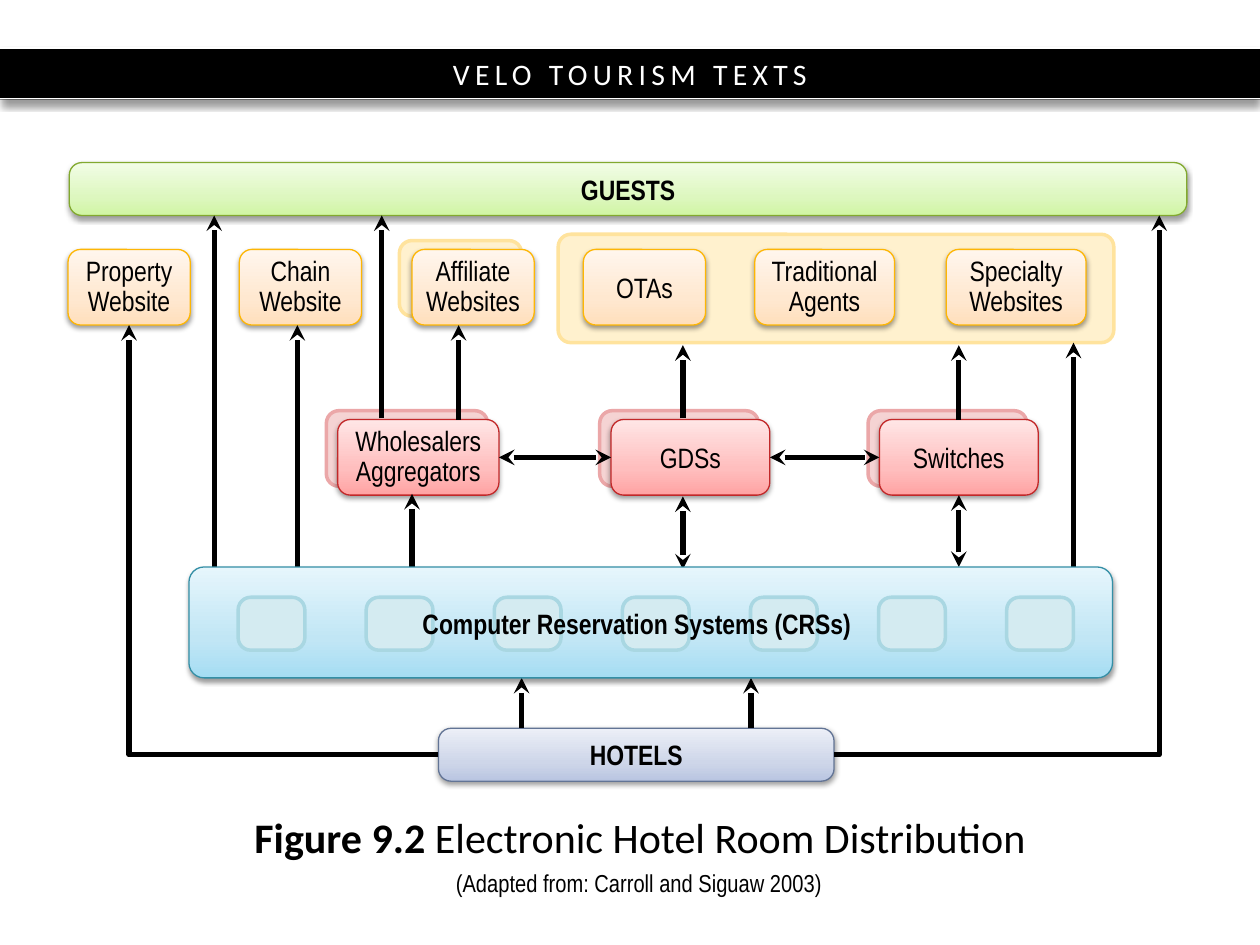
from lxml.etree import SubElement
from pptx import Presentation
from pptx.dml.color import RGBColor
from pptx.enum.shapes import MSO_CONNECTOR, MSO_SHAPE
from pptx.enum.text import MSO_ANCHOR, PP_ALIGN
from pptx.oxml import parse_xml
from pptx.oxml.ns import nsdecls, qn
from pptx.util import Inches, Pt

NARROW = "Arial Narrow"
TOP, LEFT, BOTTOM, RIGHT = range(4)

# Gradient colours from bottom to top, then the outline
GREEN = ("D0F5A3", "DDF7BF", "F2FDE6", "82A92F")
ORANGE = ("FFDFBC", "FFE8D0", "FFF6ED", "FEB604")
RED = ("FFA3A3", "FFBEBE", "FFE6E6", "C22829")
BLUE = ("A5DDF3", "C1E6F5", "E6F6FC", "348FA6")
SLATE = ("B9C5E1", "CED6E9", "ECEFF7", "627495")
# Flat fill, then the outline
PALE_YELLOW = ("FFF1CE", "FFE39D")
PALE_RED = ("F5D3D3", "EBA7A8")
PALE_BLUE = ("D4EBF1", "A9D7E2")

ROW_HEIGHT = 0.6
WEBSITE_TOP = 1.98
INTERMEDIARY_TOP = 3.33


def color(value):
    return RGBColor.from_string(value)


def add_shadow(shape, opacity, blur, distance):
    """Give the shape a black shadow straight below it."""
    shape.shadow.inherit = False
    effects = shape._element.spPr.find(qn("a:effectLst"))
    shadow = SubElement(effects, qn("a:outerShdw"), blurRad=str(Pt(blur)),
                        dist=str(Pt(distance)), dir="5400000", rotWithShape="0")
    black = SubElement(shadow, qn("a:srgbClr"), val="000000")
    SubElement(black, qn("a:alpha"), val=str(opacity * 1000))


def add_run(paragraph, text, size, font=NARROW, bold=False, text_color="000000"):
    run = paragraph.add_run()
    run.text = text
    run.font.size = Pt(size)
    run.font.name = font
    run.font.bold = bold
    run.font.color.rgb = color(text_color)
    return run


def write_label(shape, text, bold=False, inset=0.0):
    frame = shape.text_frame
    frame.word_wrap = True
    frame.vertical_anchor = MSO_ANCHOR.MIDDLE
    frame.margin_left = frame.margin_right = Inches(inset)
    frame.margin_top = frame.margin_bottom = Inches(inset / 2)
    paragraph = frame.paragraphs[0]
    paragraph.alignment = PP_ALIGN.CENTER
    if not bold:
        paragraph.line_spacing = 0.9 if " " in text or "\n" in text else 1.0
    for number, line in enumerate(text.split("\n")):
        if number:
            paragraph.add_line_break()
        add_run(paragraph, line, 16, bold=bold)


def add_rounded(slide, left, top, width, height, outline, line_width, radius=0.1):
    shape = slide.shapes.add_shape(MSO_SHAPE.ROUNDED_RECTANGLE, Inches(left),
                                   Inches(top), Inches(width), Inches(height))
    shape.adjustments[0] = radius / min(width, height)
    shape.shadow.inherit = False
    shape.line.color.rgb = color(outline)
    shape.line.width = Pt(line_width)
    return shape


def add_flat_box(slide, left, top, width, height, colors):
    fill, outline = colors
    shape = add_rounded(slide, left, top, width, height, outline, 2)
    shape.fill.solid()
    shape.fill.fore_color.rgb = color(fill)


def add_gradient_box(slide, left, top, width, height, colors, radius=0.1):
    shape = add_rounded(slide, left, top, width, height, colors[3], 0.75, radius)
    stops = "".join(f'<a:gs pos="{position}"><a:srgbClr val="{value}"/></a:gs>'
                    for position, value in zip((0, 35000, 100000), colors))
    gradient = parse_xml(f'<a:gradFill {nsdecls("a")} rotWithShape="1"><a:gsLst>{stops}'
                         '</a:gsLst><a:lin ang="16200000" scaled="0"/></a:gradFill>')
    shape._element.spPr.find(qn("a:prstGeom")).addnext(gradient)
    add_shadow(shape, 38, 3.1, 1.6)
    return shape


def add_line(slide, start, end, line_color="000000", width=3.0, kind=MSO_CONNECTOR.STRAIGHT):
    connector = slide.shapes.add_connector(kind, *map(Inches, start + end))
    connector.line.color.rgb = color(line_color)
    connector.line.width = Pt(width)
    SubElement(connector._element.spPr, qn("a:effectLst"))
    return connector


def add_arrow(slide, start, end, both=False, kind=MSO_CONNECTOR.STRAIGHT):
    connector = add_line(slide, start, end, kind=kind)
    line = connector.line._get_or_add_ln()
    for tag in ("a:headEnd", "a:tailEnd") if both else ("a:tailEnd",):
        SubElement(line, qn(tag), type="stealth")
    return connector


def add_corner_arrow(slide, start, end):
    """Arrow that runs sideways and then turns up once."""
    connector = add_arrow(slide, start, end, kind=MSO_CONNECTOR.ELBOW)
    connector._element.spPr.find(qn("a:prstGeom")).set("prst", "bentConnector2")
    return connector


def add_header(slide):
    top, bottom = 0.38, 0.78
    band = slide.shapes.add_shape(MSO_SHAPE.RECTANGLE, 0, Inches(top), Inches(10),
                                  Inches(0.41))
    band.fill.solid()
    band.fill.fore_color.rgb = color("000000")
    band.line.fill.background()
    add_shadow(band, 40, 4, 3)
    band.text_frame.vertical_anchor = MSO_ANCHOR.MIDDLE
    paragraph = band.text_frame.paragraphs[0]
    paragraph.alignment = PP_ALIGN.CENTER
    run = add_run(paragraph, "VELO TOURISM TEXTS", 17, "Calibri", text_color="FFFFFF")
    run._r.get_or_add_rPr().set("spc", "300")
    for y in (top, bottom):
        add_line(slide, (0, y), (10, y), "FFFFFF", 0.75)


def add_websites(slide):
    """Draw the row of sales sites and return them by label."""
    add_flat_box(slide, 4.43, 1.86, 4.41, 0.86, PALE_YELLOW)
    add_flat_box(slide, 3.17, 1.91, 0.97, ROW_HEIGHT, PALE_YELLOW)
    sites = (("Property\nWebsite", 0.54, 0.97), ("Chain\nWebsite", 1.9, 0.97),
             ("Affiliate\nWebsites", 3.27, 0.97), ("OTAs", 4.63, 0.97),
             ("Traditional Agents", 5.99, 1.11), ("Specialty Websites", 7.51, 1.11))
    boxes = {}
    for label, left, width in sites:
        boxes[label] = add_gradient_box(slide, left, WEBSITE_TOP, width, ROW_HEIGHT, ORANGE)
        write_label(boxes[label], label)
    return boxes


def add_intermediaries(slide):
    boxes = []
    for label, left, width in (("Wholesalers\nAggregators", 2.68, 1.28),
                               ("GDSs", 4.85, 1.26), ("Switches", 6.98, 1.26)):
        add_flat_box(slide, left - 0.09, INTERMEDIARY_TOP - 0.07, width, ROW_HEIGHT, PALE_RED)
        box = add_gradient_box(slide, left, INTERMEDIARY_TOP, width, ROW_HEIGHT, RED)
        write_label(box, label)
        boxes.append(box)
    return boxes


def add_reservation_systems(slide):
    add_gradient_box(slide, 1.5, 4.5, 7.33, 0.88, BLUE, 0.12)
    for column in range(7):
        add_flat_box(slide, 1.89 + column * 6.1 / 6, 4.74, 0.53, 0.42, PALE_BLUE)
    label = slide.shapes.add_textbox(Inches(2.84), Inches(4.74), Inches(4.43), Inches(0.42))
    write_label(label, "Computer Reservation Systems (CRSs)", bold=True, inset=0.1)


def add_flows(slide, hotels, property_site, intermediaries):
    upward = ((4.14, 5.78, 5.38), (5.96, 5.78, 5.38), (3.27, 4.5, 3.92),
              (8.52, 4.52, 2.72), (2.36, 4.52, 2.58), (5.42, 3.32, 2.74),
              (3.64, 3.33, 2.58), (3.03, 3.32, 1.71), (1.7, 4.5, 1.71))
    for x, start, end in upward:
        add_arrow(slide, (x, start), (x, end))
    add_arrow(slide, (5.42, 4.52), (5.42, 3.94), both=True)

    wholesalers, systems, switches = intermediaries
    add_arrow(slide, (7.61, 4.5), (7.61, 3.93), both=True).end_connect(switches, BOTTOM)
    add_arrow(slide, (7.61, 3.33), (7.61, 2.74)).begin_connect(switches, TOP)
    for left_box, right_box in ((wholesalers, systems), (systems, switches)):
        link = add_arrow(slide, (3.96, 3.63), (4.85, 3.63), both=True)
        link.begin_connect(left_box, RIGHT)
        link.end_connect(right_box, LEFT)

    to_property = add_corner_arrow(slide, (3.48, 5.99), (1.02, 2.58))
    to_property.begin_connect(hotels, LEFT)
    to_property.end_connect(property_site, BOTTOM)
    add_corner_arrow(slide, (6.62, 5.99), (9.2, 1.71)).begin_connect(hotels, RIGHT)


def add_caption(slide):
    title = slide.shapes.add_textbox(Inches(0.8), Inches(6.38), Inches(8.56), Inches(0.48))
    title.text_frame.word_wrap = True
    title.text_frame.vertical_anchor = MSO_ANCHOR.MIDDLE
    paragraph = title.text_frame.paragraphs[0]
    paragraph.alignment = PP_ALIGN.CENTER
    paragraph.line_spacing = Pt(32)
    add_run(paragraph, "Figure 9.2 ", 24, "Calibri", bold=True)
    add_run(paragraph, "Electronic Hotel Room Distribution", 24, "Calibri")
    credit = slide.shapes.add_textbox(Inches(3.52), Inches(6.84), Inches(3.13), Inches(0.34))
    credit.text_frame.word_wrap = False
    add_run(credit.text_frame.paragraphs[0], "(Adapted from: Carroll and Siguaw 2003)", 14)


def main():
    presentation = Presentation()
    presentation.slide_width, presentation.slide_height = Inches(10), Inches(7.5)
    slide = presentation.slides.add_slide(presentation.slide_layouts[6])
    add_header(slide)
    hotels = add_gradient_box(slide, 3.48, 5.78, 3.14, 0.42, SLATE)
    write_label(hotels, "HOTELS", bold=True, inset=0.1)
    guests = add_gradient_box(slide, 0.55, 1.29, 8.87, 0.42, GREEN)
    write_label(guests, "GUESTS", bold=True, inset=0.1)
    websites = add_websites(slide)
    intermediaries = add_intermediaries(slide)
    add_flows(slide, hotels, websites["Property\nWebsite"], intermediaries)
    add_reservation_systems(slide)
    add_caption(slide)
    presentation.save("out.pptx")


if __name__ == "__main__":
    main()
